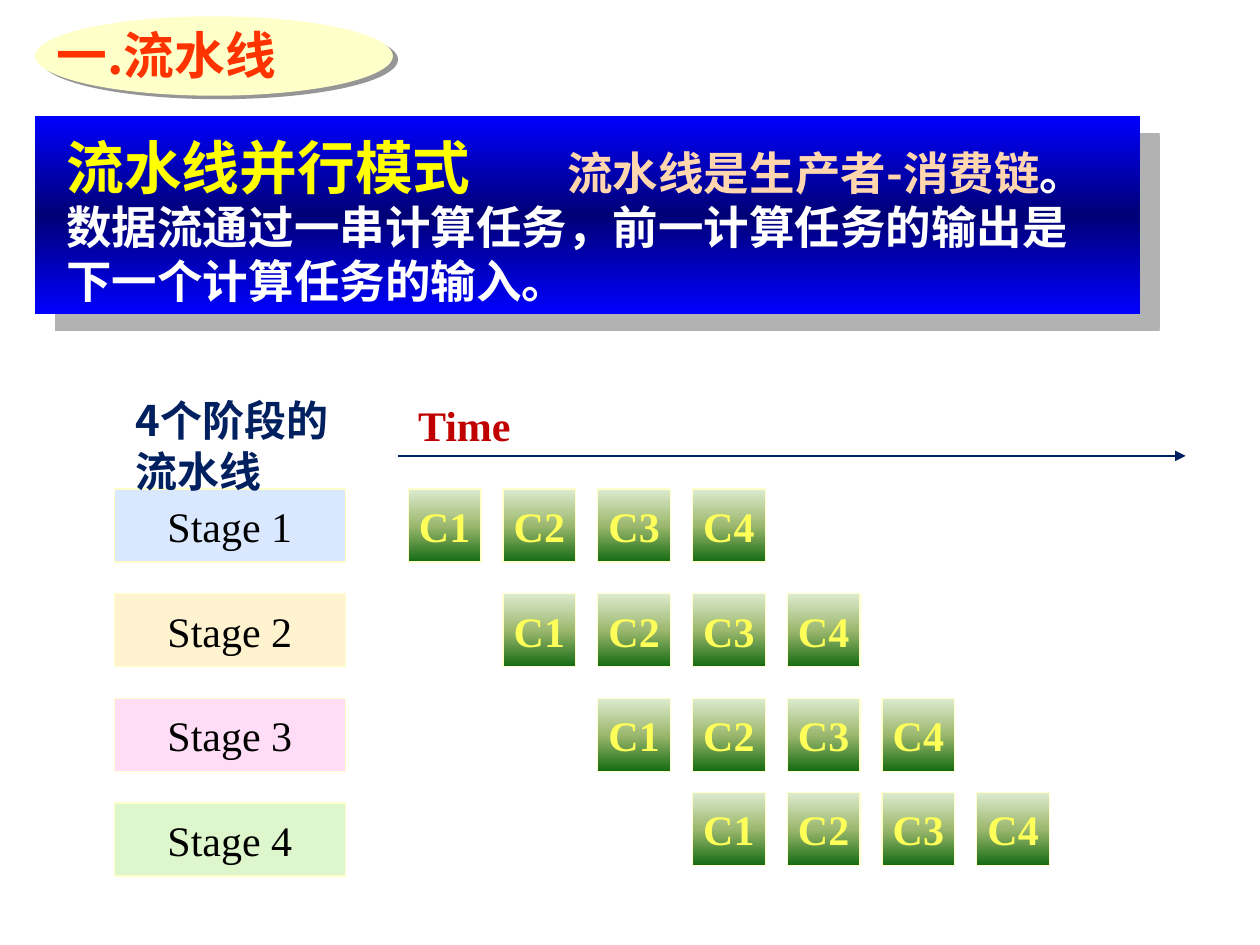
from copy import deepcopy

from lxml import etree
from pptx import Presentation, util as u
from pptx.dml import color
from pptx.enum import shapes, text
from pptx.oxml import ns

CJK, SERIF = "Noto Sans CJK SC", "Times New Roman"
STAGE_FILLS = ["D9E8FF", "FFF2CF", "FFDDF6", "DDF6CC"]
CHIP_TOPS = [2.14, 4.25, 6.36, 8.26]


def rgb(value):
    """Return a colour from a hex string."""
    return color.RGBColor.from_string(value)


def assign(obj, **values):
    """Set several attributes of an object."""
    for name, value in values.items():
        setattr(obj, name, value)


def place(sp, left, top, width, height):
    """Place a shape by lengths in centimetres."""
    assign(sp, left=u.Cm(left), top=u.Cm(top), width=u.Cm(width), height=u.Cm(height))


def add_effect(parent, dist, angle, value):
    """Put an outer shadow into an effect list."""
    shadow = etree.SubElement(parent, ns.qn("a:outerShdw"), dist=str(u.Pt(dist)),
                              dir=str(angle * 60000), algn="ctr", rotWithShape="0")
    etree.SubElement(shadow, ns.qn("a:srgbClr"), val=value)


def add_run(p, content, size, value, bold=True, font=CJK, shadow=False):
    """Add a formatted run to a paragraph."""
    r = p.add_run()
    r.text = content
    assign(r.font, size=u.Pt(size), bold=bold, name=font)
    r.font.color.rgb = rgb(value)
    props = r.font._element
    latin = props.find(ns.qn("a:latin"))
    east = etree.Element(ns.qn("a:ea"), typeface=CJK)
    latin.addnext(east)
    if shadow:
        effects = etree.Element(ns.qn("a:effectLst"))
        latin.addprevious(effects)
        add_effect(effects, 2, 45, "000000")


def set_text(sp, runs, size, wrap=True, cjk=True, **style):
    """Fill a text frame with top-left aligned runs."""
    tf = sp.text_frame
    assign(tf, word_wrap=wrap, auto_size=text.MSO_AUTO_SIZE.NONE,
           vertical_anchor=text.MSO_ANCHOR.TOP, margin_left=u.Cm(0.25),
           margin_right=u.Cm(0.25), margin_bottom=0,
           margin_top=u.Cm(0.13) + (u.Pt(size * 0.11) if cjk else 0))
    p = tf.paragraphs[0]
    p.alignment = text.PP_ALIGN.LEFT
    if cjk:
        p.line_spacing = u.Pt(round(size * 1.2))
    for content, value in runs:
        add_run(p, content, size, value, **style)
    return p


def add_text(s, box, runs, size, **style):
    """Add a text box and return its paragraph."""
    sp = s.shapes.add_textbox(*map(u.Cm, box))
    return set_text(sp, runs, size, **style)


def add_box(s, box, fill, kind=shapes.MSO_SHAPE.RECTANGLE, line=None, shadow=None):
    """Add a shape with a plain fill or a vertical gradient."""
    sp = s.shapes.add_shape(kind, *map(u.Cm, box))
    sp.shadow.inherit = False
    if isinstance(fill, str):
        sp.fill.solid()
        sp.fill.fore_color.rgb = rgb(fill)
    else:
        sp.fill.gradient()
        sp.fill.gradient_angle = 270
        stops = sp._element.spPr.find(".//" + ns.qn("a:gsLst"))
        stops.insert(1, deepcopy(stops[0]))
        for i, (stop, value) in enumerate(zip(sp.fill.gradient_stops, fill)):
            stop.position = i / 2
            stop.color.rgb = rgb(value)
    if line:
        sp.line.color.rgb = rgb(line)
        sp.line.width = u.Pt(0.75)
    else:
        sp.line.fill.background()
    if shadow:
        add_effect(sp._element.spPr.find(ns.qn("a:effectLst")), *shadow)
    return sp


def add_label_box(s, box, label, fill, value, bold):
    """Add a bordered rectangle with a centred label."""
    sp = add_box(s, box, fill, line="FFFFCC")
    assign(sp.text_frame, word_wrap=False, vertical_anchor=text.MSO_ANCHOR.MIDDLE)
    p = sp.text_frame.paragraphs[0]
    p.alignment = text.PP_ALIGN.CENTER
    add_run(p, label, 24, value, bold, SERIF)


def add_heading(s, x, y):
    """Place the slide title over its ellipse."""
    add_box(s, (x, y, 7.21, 1.6), "FFFFC9", shapes.MSO_SHAPE.OVAL,
            shadow=(3.6, 34, "969696"))
    title = s.shapes.title
    s.shapes._spTree.append(title._element)
    place(title, x + 0.18, y - 0.1, 6.6, 1.5)
    set_text(title, [("一.流水线", "FF3300")], 29, shadow=True)


def add_banner(s, x, y):
    """Draw the definition banner."""
    add_box(s, (x, y, 22.28, 3.99), ["0000FF", "000076", "0000FF"],
            shadow=(14.9, 42, "B2B2B2"))
    p = add_text(s, (x + 0.38, y + 0.35, 21.5, 3.58), [
        ("流水线是生产者-消费链", "FFD6AD"),
        ("。数据流通过一串计算任务，前一计算任务的输出是下一个计算任务的输入。", "FFFFFF"),
    ], 26)
    p._p.get_or_add_pPr().set("indent", str(u.Cm(10.1)))
    add_text(s, (x + 0.38, y + 0.05, 9.19, 1.68), [("流水线并行模式", "FFFF00")], 33,
             font=SERIF, shadow=True)


def add_time_axis(s, x, y):
    """Draw the time arrow with its label."""
    line = s.shapes.add_connector(shapes.MSO_CONNECTOR.STRAIGHT,
                                  *map(u.Cm, (x, y, x + 15.87, y)))
    line.line.color.rgb = rgb("002060")
    line.line.width = u.Pt(1.25)
    etree.SubElement(line.line._get_or_add_ln(), ns.qn("a:tailEnd"), type="triangle")
    etree.SubElement(line._element.spPr, ns.qn("a:effectLst"))
    add_text(s, (x + 0.15, y - 1.27, 2.39, 1.27), [("Time", "C00000")], 24,
             wrap=False, cjk=False, font=SERIF)


def add_pipeline(s, x, y):
    """Draw the four stages and their staggered chips."""
    for i, (fill, top) in enumerate(zip(STAGE_FILLS, CHIP_TOPS)):
        add_label_box(s, (x, y + 2.14 + 2.11 * i, 4.65, 1.47), f"Stage {i + 1}",
                      fill, "000000", False)
        for j in range(4):
            add_label_box(s, (x + 5.92 + 1.91 * (i + j), y + top, 1.47, 1.47),
                          f"C{j + 1}", ["DDEBCF", "9CB86E", "156B13"], "FFFF59", True)
    add_time_axis(s, x + 5.72, y + 1.47)
    add_text(s, (x + 0.18, y, 4.8, 2.31), [("4个阶段的流水线", "002060")], 24)


def main():
    """Build and save the slide."""
    prs = Presentation()
    assign(prs, slide_width=u.Cm(25.4), slide_height=u.Cm(19.05))
    s = prs.slides.add_slide(prs.slide_layouts[5])
    add_heading(s, 0.71, 0.33)
    add_banner(s, 0.71, 2.34)
    add_pipeline(s, 2.31, 7.72)
    prs.save("out.pptx")


if __name__ == "__main__":
    main()
